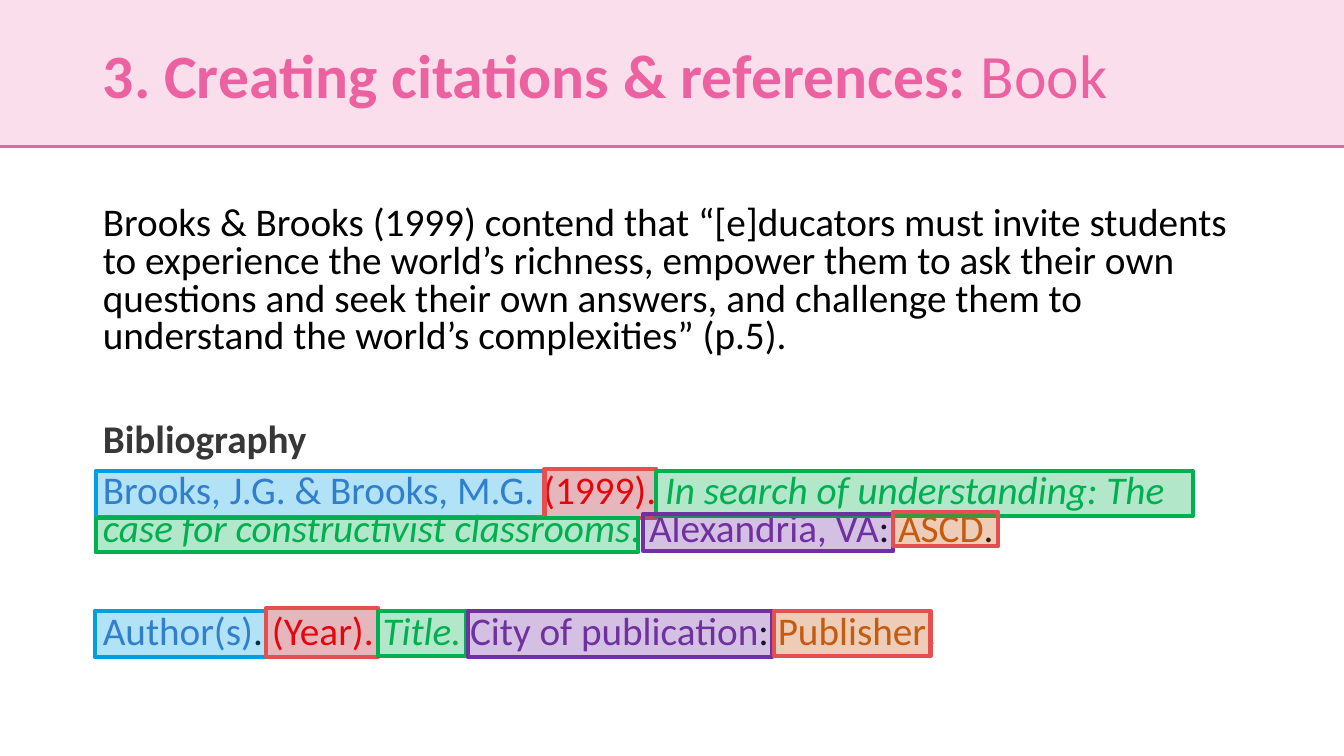
from lxml.etree import SubElement
from pptx import Presentation
from pptx.dml.color import RGBColor
from pptx.enum.shapes import MSO_CONNECTOR as CONN, MSO_SHAPE as SHAPE
from pptx.enum.text import MSO_ANCHOR as ANCHOR, MSO_AUTO_SIZE as FIT, PP_ALIGN as ALIGN
from pptx.oxml.ns import qn
from pptx.util import Inches, Pt

W, H = 13.33, 7.5
BAND_H = 1.45
LEFT, TEXT_W = 0.92, 11.5

BLACK = RGBColor(0x00, 0x00, 0x00)
GREY = RGBColor(0x37, 0x37, 0x37)
PINK = RGBColor(0xEC, 0x61, 0x9F)
PALE_PINK = RGBColor(0xFA, 0xDE, 0xEC)
BLUE = RGBColor(0x44, 0x72, 0xC4)
RED = RGBColor(0xFF, 0x00, 0x00)
GREEN = RGBColor(0x00, 0xB0, 0x50)
PURPLE = RGBColor(0x70, 0x30, 0xA0)
ORANGE = RGBColor(0xC5, 0x5A, 0x11)
SKY = RGBColor(0x00, 0x9F, 0xE3)
CRIMSON = RGBColor(0xAA, 0x11, 0x24)
CORAL = RGBColor(0xE6, 0x4F, 0x4F)

BASE = {"name": "Calibri", "size": Pt(28), "bold": False, "italic": False}
HEADING = {**BASE, "size": Pt(44)}

TITLE = [("3. Creating citations & references: ", PINK, {"bold": True}),
         ("Book", PINK, {})]

QUOTE = ("Brooks & Brooks (1999) contend that “[e]ducators must invite students "
         "to experience the world’s richness, empower them to ask their own "
         "questions and seek their own answers, and challenge them to "
         "understand the world’s complexities” (p.5).")

BODY = [
    (0, [(QUOTE, BLACK, {})]),
    (47, [("Bibliography", GREY, {"bold": True})]),
    (10, [("Brooks, J.G. & Brooks, M.G. ", BLUE, {}),
          ("(1999). ", RED, {}),
          ("In search of understanding: The case for constructivist classrooms",
           GREEN, {"italic": True}),
          (". ", GREEN, {}),
          ("Alexandria, VA", PURPLE, {}), (": ", BLACK, {}),
          ("ASCD", ORANGE, {}), (".", BLACK, {})]),
    (47, [("Author(s)", BLUE, {}), (". ", BLACK, {}),
          ("(Year). ", RED, {}),
          ("Title. ", GREEN, {"italic": True}),
          ("City of publication", PURPLE, {}), (": ", BLACK, {}),
          ("Publisher", ORANGE, {}), (".", BLACK, {})]),
]

PARTS = {"author": (SKY, SKY), "year": (CRIMSON, CORAL), "title": (GREEN, GREEN),
         "city": (PURPLE, PURPLE), "publisher": (ORANGE, CORAL)}

HIGHLIGHT_ROWS = [
    (0.95, 4.67, [("author", 0, 0, 4.45, 0.46), ("year", 0, 0.02, 1.11, 0.49),
                  ("title", 0, 0, 5.32, 0.45)]),
    (0.95, 5.14, [("title", 0, 0, 5.38, 0.34), ("city", 0.05, 0.04, 2.48, 0.37),
                  ("publisher", 0, 0.06, 1.04, 0.34)]),
    (0.94, 6.06, [("author", 0, 0, 1.7, 0.46), ("year", 0, 0.03, 1.11, 0.49),
                  ("title", 0, 0, 0.87, 0.45), ("city", 0.02, 0, 3.02, 0.46),
                  ("publisher", 0.02, 0, 1.55, 0.45)]),
]


def apply(target, values):
    """Set each attribute of the target from a dict of values."""
    for name, value in values.items():
        setattr(target, name, value)


def place(sp, left, top, width, height):
    """Move and size a shape in inches."""
    apply(sp, {"left": Inches(left), "top": Inches(top),
               "width": Inches(width), "height": Inches(height)})


def send_back(sp, index):
    """Put a shape behind the placeholders at the given depth."""
    tree = sp.element.getparent()
    tree.insert(2 + index, sp.element)


def fill_paragraph(p, runs, font, **layout):
    """Write coloured runs into an unbulleted, left-aligned paragraph."""
    pPr = p._p.get_or_add_pPr()
    apply_indent = {"marL": "0", "indent": "0"}
    for name, value in apply_indent.items():
        pPr.set(name, value)
    SubElement(pPr, qn("a:buNone"))
    apply(p, {"alignment": ALIGN.LEFT, **layout})
    for text, color, extra in runs:
        r = p.add_run()
        r.text = text
        apply(r.font, {**font, **extra})
        r.font.color.rgb = color


def add_rect(s, left, top, width, height, fill):
    """Add a flat filled rectangle."""
    sp = s.shapes.add_shape(SHAPE.RECTANGLE, Inches(left), Inches(top),
                            Inches(width), Inches(height))
    sp.shadow.inherit = False
    sp.fill.solid()
    sp.fill.fore_color.rgb = fill
    return sp


def add_band(s):
    """Add the title band and the rule under it."""
    band = add_rect(s, 0, 0, W, BAND_H, PALE_PINK)
    band.line.fill.background()
    send_back(band, 0)
    rule = s.shapes.add_connector(CONN.STRAIGHT, 0, Inches(BAND_H),
                                  Inches(W), Inches(BAND_H))
    rule.line.color.rgb = PINK
    rule.line.width = Pt(2.25)
    SubElement(rule.element.spPr, qn("a:effectLst"))
    send_back(rule, 1)


def add_highlight(s, part, left, top, width, height):
    """Add a translucent marker over one part of a reference."""
    fill, line = PARTS[part]
    sp = add_rect(s, left, top, width, height, fill)
    color = sp.element.spPr.find(qn("a:solidFill"))[0]
    SubElement(color, qn("a:alpha")).set("val", "30000")
    sp.line.color.rgb = line
    sp.line.width = Pt(3)


def add_highlight_row(s, left, top, markers):
    """Lay markers side by side, each after the one before."""
    for part, gap, rise, width, height in markers:
        left += gap
        add_highlight(s, part, left, top - rise, width, height)
        left += width


def fill_title(sp):
    """Set the heading in the title placeholder."""
    place(sp, LEFT, 0.1, TEXT_W, BAND_H - 0.1)
    tf = sp.text_frame
    apply(tf, {"auto_size": FIT.NONE, "vertical_anchor": ANCHOR.MIDDLE, "word_wrap": True})
    fill_paragraph(tf.paragraphs[0], TITLE, HEADING, line_spacing=0.9)


def fill_body(sp):
    """Set the quotation and references in the body placeholder."""
    place(sp, LEFT, 2, TEXT_W, 4.76)
    tf = sp.text_frame
    apply(tf, {"auto_size": FIT.NONE, "vertical_anchor": ANCHOR.TOP, "word_wrap": True})
    for i, (before, runs) in enumerate(BODY):
        p = tf.add_paragraph() if i else tf.paragraphs[0]
        fill_paragraph(p, runs, BASE, line_spacing=0.8, space_before=Pt(before))


def main():
    """Build and save the slide."""
    prs = Presentation()
    apply(prs, {"slide_width": Inches(W), "slide_height": Inches(H)})
    s = prs.slides.add_slide(prs.slide_layouts[1])
    fill_title(s.shapes.title)
    fill_body(s.placeholders[1])
    add_band(s)
    for left, top, markers in HIGHLIGHT_ROWS:
        add_highlight_row(s, left, top, markers)
    prs.save("out.pptx")


if __name__ == "__main__":
    main()
